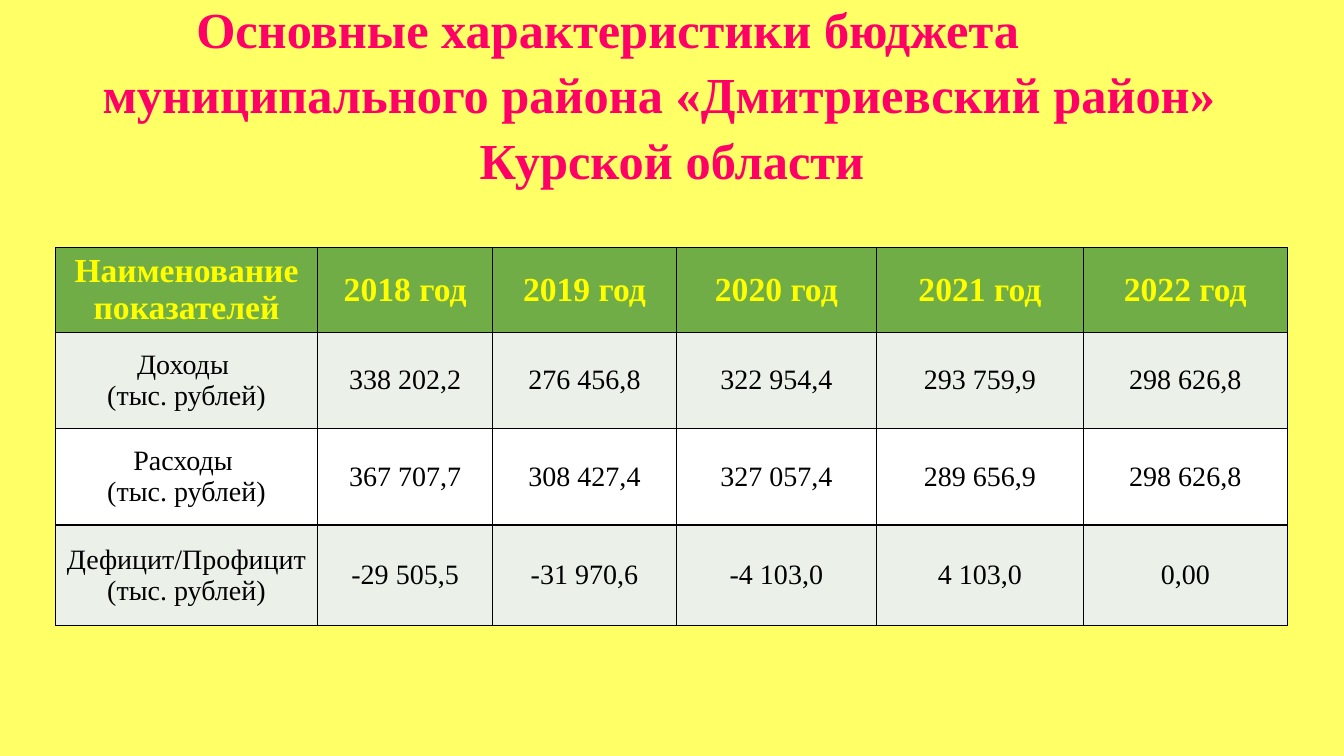
from dataclasses import dataclass

from lxml.etree import SubElement
from pptx import Presentation
from pptx.dml.color import RGBColor
from pptx.enum.text import MSO_ANCHOR, MSO_AUTO_SIZE, PP_ALIGN
from pptx.oxml.ns import qn
from pptx.util import Cm, Pt

YELLOW_PAGE = RGBColor(0xFF, 0xFF, 0x66)
PINK = RGBColor(0xFF, 0x00, 0x66)
YELLOW = RGBColor(0xFF, 0xFF, 0x00)
GREEN = RGBColor(0x70, 0xAD, 0x47)
PALE_GREEN = RGBColor(0xEB, 0xF1, 0xE9)
WHITE = RGBColor(0xFF, 0xFF, 0xFF)
BLACK = RGBColor(0x00, 0x00, 0x00)

FONT = "Times New Roman"
TITLE_FORMAT = {"name": FONT, "size": Pt(36), "bold": True}
HEADER_FORMAT = {"name": FONT, "size": Pt(24), "bold": True}
BODY_FORMAT = {"name": FONT, "size": Pt(20), "bold": False}


@dataclass
class TitleLine:
    text: str
    right_indent: float


@dataclass
class BudgetRow:
    texts: list[str]
    height: float
    fill: RGBColor
    font_format: dict
    color: RGBColor


TITLE_LINES = [
    TitleLine("Основные характеристики бюджета", 3.23),
    TitleLine("муниципального района «Дмитриевский район»", 0.65),
    TitleLine("Курской области", 0),
]
COLUMN_WIDTHS = [6.6, 4.42, 4.62, 5.05, 5.21, 5.14]
BUDGET_ROWS = [
    BudgetRow(["Наименование показателей"] + [f"{year} год" for year in range(2018, 2023)],
              2.13, GREEN, HEADER_FORMAT, YELLOW),
    BudgetRow(["Доходы \n(тыс. рублей)", "338 202,2", "276 456,8", "322 954,4",
               "293 759,9", "298 626,8"], 2.43, PALE_GREEN, BODY_FORMAT, BLACK),
    BudgetRow(["Расходы \n(тыс. рублей)", "367 707,7", "308 427,4", "327 057,4",
               "289 656,9", "298 626,8"], 2.43, WHITE, BODY_FORMAT, BLACK),
    BudgetRow(["Дефицит/Профицит\n(тыс. рублей)", "-29 505,5", "-31 970,6", "-4 103,0",
               "4 103,0", "0,00"], 2.54, PALE_GREEN, BODY_FORMAT, BLACK),
]


def format_text(frame, font_format: dict, color: RGBColor) -> None:
    for para in frame.paragraphs:
        para.alignment = PP_ALIGN.CENTER
        for span in para.runs:
            for name, value in font_format.items():
                setattr(span.font, name, value)
            span.font.color.rgb = color


def add_borders(cell) -> None:
    properties = cell._tc.get_or_add_tcPr()
    for side in ("a:lnL", "a:lnR", "a:lnT", "a:lnB"):
        line = SubElement(properties, qn(side), w=str(Pt(1)))
        fill = SubElement(line, qn("a:solidFill"))
        SubElement(fill, qn("a:srgbClr"), val=str(BLACK))


def fill_title(title, lines: list[TitleLine]) -> None:
    box = {"left": 0, "top": 0, "width": Cm(33.87), "height": Cm(4.6)}
    for name, value in box.items():
        setattr(title, name, value)
    frame = title.text_frame
    frame.text = "\n".join(line.text for line in lines)
    frame.word_wrap = True
    frame.auto_size = MSO_AUTO_SIZE.NONE
    frame.vertical_anchor = MSO_ANCHOR.MIDDLE
    format_text(frame, TITLE_FORMAT, PINK)
    for para, line in zip(frame.paragraphs, lines):
        para.line_spacing = 1.08
        para._p.get_or_add_pPr().set("marR", str(Cm(line.right_indent)))


def add_budget_table(page, rows: list[BudgetRow], widths: list[float]) -> None:
    table = page.shapes.add_table(
        len(rows), len(widths), Cm(1.4), Cm(6.24),
        Cm(sum(widths)), Cm(sum(row.height for row in rows))).table
    for column, width in zip(table.columns, widths):
        column.width = Cm(width)
    for table_row, row in zip(table.rows, rows):
        table_row.height = Cm(row.height)
        for cell, text in zip(table_row.cells, row.texts):
            cell.text = text
            cell.vertical_anchor = MSO_ANCHOR.MIDDLE
            format_text(cell.text_frame, row.font_format, row.color)
            add_borders(cell)
            cell.fill.solid()
            cell.fill.fore_color.rgb = row.fill


def main() -> None:
    deck = Presentation()
    deck.slide_width, deck.slide_height = Cm(33.87), Cm(19.05)

    # Page with a plain background
    page = deck.slides.add_slide(deck.slide_layouts[5])
    page.background.fill.solid()
    page.background.fill.fore_color.rgb = YELLOW_PAGE

    # Title and budget figures
    fill_title(page.shapes.title, TITLE_LINES)
    add_budget_table(page, BUDGET_ROWS, COLUMN_WIDTHS)

    deck.save("out.pptx")


if __name__ == "__main__":
    main()
